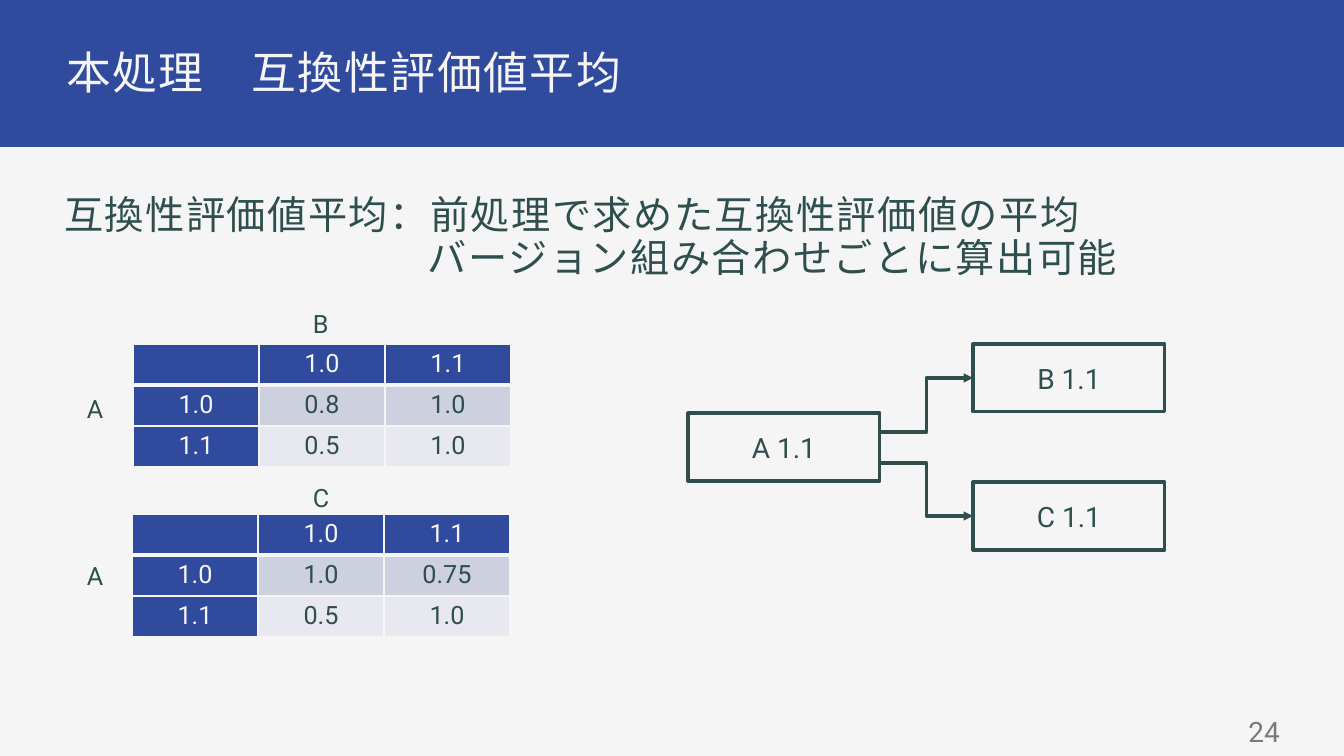
"""Build the slide on mean compatibility scores, with two score tables and a version graph."""
from dataclasses import dataclass

from lxml.etree import SubElement
from pptx import Presentation
from pptx.dml.color import RGBColor
from pptx.enum.shapes import MSO_CONNECTOR, MSO_SHAPE
from pptx.enum.text import MSO_ANCHOR, MSO_AUTO_SIZE, PP_ALIGN
from pptx.oxml import parse_xml
from pptx.oxml.ns import nsdecls, qn
from pptx.util import Pt

TITLE = "本処理　互換性評価値平均"
LINES = [
    ("互換性評価値平均：前処理で求めた互換性評価値の平均", 0, 14),
    ("バージョン組み合わせごとに算出可能", 364, 0),
]
TABLES = [
    (133, 344, [["", "1.0", "1.1"], ["1.0", "0.8", "1.0"], ["1.1", "0.5", "1.0"]]),
    (132, 514, [["", "1.0", "1.1"], ["1.0", "1.0", "0.75"], ["1.1", "0.5", "1.0"]]),
]
LABELS = [("A", 77, 388), ("B", 303, 303), ("A", 77, 555), ("C", 303, 477)]
BOXES = {"A 1.1": (688, 413), "B 1.1": (973, 344), "C 1.1": (973, 482)}
LINKS = [("A 1.1", "B 1.1", 432), ("A 1.1", "C 1.1", 463)]
PAGE = "24"
CELL_W, CELL_H = 126, 41
BOX_W, BOX_H = 192, 68


@dataclass(frozen=True)
class Theme:
    """Hold the colours, type sizes and font of the slide."""
    blue: str = "304A9E"
    pale: str = "F5F5F5"
    ink: str = "2F4F4F"
    grey: str = "7A7A7A"
    bands: tuple = ("CDD0DF", "E8E9F0")
    font: str = "Roboto"
    head: int = 32
    body: int = 28
    node: int = 20
    cell: int = 18
    line: float = 2.25


LOOK = Theme()


def px(size):
    """Turn pixels into EMU."""
    return round(size * 914400 / 100.8)


def rgb(code):
    """Turn a hex code into a colour."""
    return RGBColor.from_string(code)


def assign(item, **values):
    """Set each given value on the item."""
    for name, value in values.items():
        setattr(item, name, value)


def place(shape, left, top, width, height):
    """Move and size a shape in pixels."""
    assign(shape, left=px(left), top=px(top), width=px(width), height=px(height))


def paint(item, code):
    """Give an item a solid fill."""
    item.fill.solid()
    item.fill.fore_color.rgb = rgb(code)


def write(para, text, size, code, track=0, **values):
    """Write one run and format its paragraph."""
    run = para.add_run()
    run.text = text
    assign(run.font, name=LOOK.font, size=Pt(size))
    run.font.color.rgb = rgb(code)
    props = run.font._element
    SubElement(props, qn("a:ea")).set("typeface", LOOK.font)
    if track:
        props.set("spc", str(track))
    assign(para, **values)


def setup(frame, inset=None, **values):
    """Format a text frame, with insets in pixels if given."""
    assign(frame, **{"word_wrap": True, "auto_size": MSO_AUTO_SIZE.NONE, **values})
    if inset:
        for side, size in zip(("left", "top", "right", "bottom"), inset):
            setattr(frame, f"margin_{side}", px(size))


def draw_rect(shapes, left, top, width, height, fill):
    """Add a plain rectangle."""
    rect = shapes.add_shape(MSO_SHAPE.RECTANGLE, 0, 0, 0, 0)
    place(rect, left, top, width, height)
    rect.shadow.inherit = False
    paint(rect, fill)
    return rect


def fill_heads(slide):
    """Fill the title band and the body text."""
    title, body = slide.placeholders
    band = draw_rect(slide.shapes, -3, -2, 1350, 149, LOOK.blue)
    band.line.fill.background()
    title._element.addprevious(band._element)

    place(title, 58, 43, 1228, 60)
    setup(title.text_frame, (8, 8, 8, 6), vertical_anchor=MSO_ANCHOR.TOP)
    write(title.text_frame.paragraphs[0], TITLE, LOOK.head, LOOK.pale, 110,
          alignment=PP_ALIGN.JUSTIFY, line_spacing=0.9, space_before=Pt(16))

    place(body, 58, 190, 1228, 522)
    frame = body.text_frame
    setup(frame, (6, 6, 6, 6), vertical_anchor=MSO_ANCHOR.TOP)
    for spot, (text, indent, gap) in enumerate(LINES):
        para = frame.add_paragraph() if spot else frame.paragraphs[0]
        write(para, text, LOOK.body, LOOK.ink, 110,
              alignment=PP_ALIGN.LEFT, line_spacing=0.9, space_before=Pt(gap))
        props = para._p.get_or_add_pPr()
        props.set("marL", str(px(indent)))
        props.set("indent", "0")
        SubElement(props, qn("a:buNone"))


def edge(cell, row):
    """Draw the cell borders, thick below the header row."""
    props = cell._tc.get_or_add_tcPr()
    thick = {(0, "B"), (1, "T")}
    for spot, side in enumerate("LRTB"):
        width = Pt(3 if (row, side) in thick else 1)
        props.insert(spot, parse_xml(
            f'<a:ln{side} {nsdecls("a")} w="{width}"><a:solidFill>'
            f'<a:srgbClr val="{LOOK.pale}"/></a:solidFill></a:ln{side}>'))


def draw_table(shapes, left, top, rows):
    """Add one table of scores."""
    count, width = len(rows), len(rows[0])
    table = shapes.add_table(count, width, px(left), px(top),
                             px(CELL_W * width), px(CELL_H * count)).table
    for row, texts in enumerate(rows):
        for col, text in enumerate(texts):
            cell = table.cell(row, col)
            head = row == 0 or col == 0
            paint(cell, LOOK.blue if head else LOOK.bands[row - 1])
            edge(cell, row)
            if text:
                write(cell.text_frame.paragraphs[0], text, LOOK.cell,
                      LOOK.pale if head else LOOK.ink, alignment=PP_ALIGN.CENTER)


def draw_graph(shapes):
    """Add the version boxes and the arrows between them."""
    nodes = {}
    for text, (left, top) in BOXES.items():
        node = nodes[text] = draw_rect(shapes, left, top, BOX_W, BOX_H, LOOK.pale)
        node.line.color.rgb = rgb(LOOK.ink)
        node.line.width = Pt(LOOK.line)
        setup(node.text_frame, vertical_anchor=MSO_ANCHOR.MIDDLE)
        write(node.text_frame.paragraphs[0], text, LOOK.node, LOOK.ink,
              alignment=PP_ALIGN.CENTER)
    for start, end, top in LINKS:
        left, goal = BOXES[start][0] + BOX_W, BOXES[end]
        link = shapes.add_connector(MSO_CONNECTOR.ELBOW, px(left), px(top),
                                    px(goal[0]), px(goal[1] + BOX_H / 2))
        link.end_connect(nodes[end], 1)
        link.line.color.rgb = rgb(LOOK.ink)
        link.line.width = Pt(LOOK.line)
        SubElement(link.line._get_or_add_ln(), qn("a:tailEnd")).set("type", "triangle")
        SubElement(link._element.spPr, qn("a:effectLst"))


def draw_text(shapes, spot, text, size, code, align, inset=None, **values):
    """Add a text box."""
    box = shapes.add_textbox(0, 0, 0, 0)
    place(box, *spot)
    setup(box.text_frame, inset, **values)
    write(box.text_frame.paragraphs[0], text, size, code, alignment=align)


def main():
    """Build and save the deck."""
    deck = Presentation()
    assign(deck, slide_width=px(1344), slide_height=px(756))
    slide = deck.slides.add_slide(deck.slide_layouts[1])
    paint(slide.background, LOOK.pale)
    shapes = slide.shapes
    fill_heads(slide)
    draw_graph(shapes)
    for left, top, rows in TABLES:
        draw_table(shapes, left, top, rows)
    for text, left, top in LABELS:
        draw_text(shapes, (left, top, 36, 40), text, LOOK.cell, LOOK.ink, PP_ALIGN.LEFT)
    draw_text(shapes, (984, 712, 302, 39), PAGE, LOOK.node, LOOK.grey, PP_ALIGN.RIGHT,
              (6, 6, 6, 6), vertical_anchor=MSO_ANCHOR.MIDDLE)
    deck.save("out.pptx")


if __name__ == "__main__":
    main()
